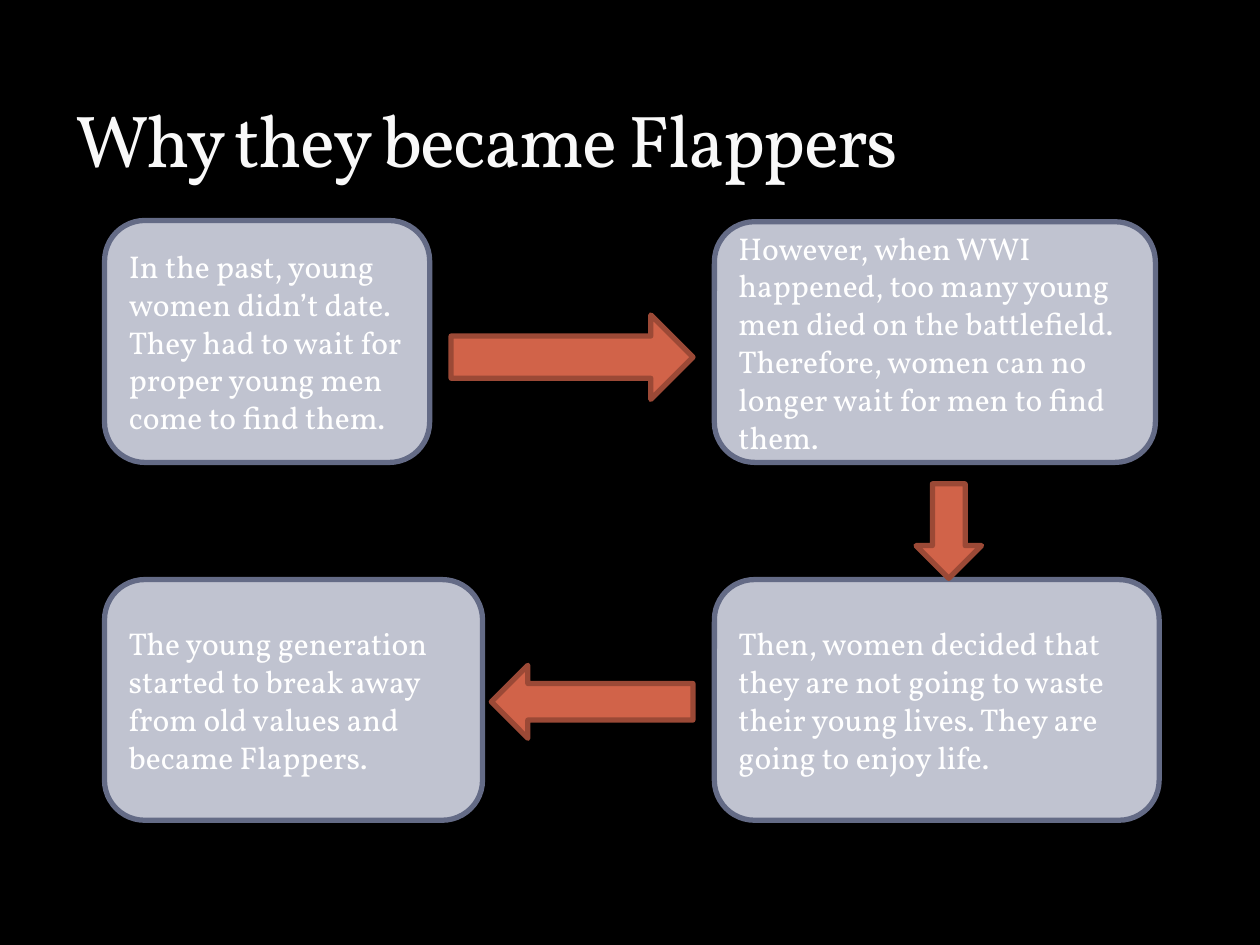
from dataclasses import dataclass

from lxml.etree import SubElement
from pptx import Presentation
from pptx.dml.color import RGBColor
from pptx.enum.shapes import MSO_SHAPE as Preset
from pptx.enum.text import MSO_ANCHOR as Anchor, MSO_AUTO_SIZE as AutoSize, PP_ALIGN as Align
from pptx.oxml.ns import qn
from pptx.util import Inches, Pt


@dataclass(frozen=True)
class Theme:
    font: str = "Vollkorn"
    background: str = "000000"
    title: str = "F9F9F9"
    title_outline: str = "585E76"
    body: str = "FFFFFF"
    box_fill: str = "C0C3D0"
    box_line: str = "646B86"
    arrow_fill: str = "D16349"
    arrow_line: str = "9B4936"
    title_size: float = 42
    body_size: float = 18
    line_width: float = 3


@dataclass(frozen=True)
class Step:
    left: float
    top: float
    width: float
    height: float
    text: str


@dataclass(frozen=True)
class Arrow:
    preset: Preset
    left: float
    top: float
    width: float
    height: float


THEME = Theme()
LEFT_COLUMN, RIGHT_COLUMN = 0.83, 5.67
LOWER_ROW, BOX_HEIGHT = 4.6, 1.91

STEPS = [
    Step(LEFT_COLUMN, 1.75, 2.58, 1.92,
         "In the past, young women didn’t date. They had to wait for proper "
         "young men come to find them."),
    Step(RIGHT_COLUMN, 1.76, 3.5, BOX_HEIGHT,
         "However, when WWI happened, too many young men died on the battlefield. "
         "Therefore, women can no longer wait for men to find them."),
    Step(RIGHT_COLUMN, LOWER_ROW, 3.53, BOX_HEIGHT,
         "Then, women decided that they are not going to waste their young lives. "
         "They are going to enjoy life."),
    Step(LEFT_COLUMN, LOWER_ROW, 3, BOX_HEIGHT,
         "The young generation started to break away from old values and "
         "became Flappers."),
]

ARROWS = [
    Arrow(Preset.RIGHT_ARROW, 3.58, 2.5, 1.92, 0.67),
    Arrow(Preset.DOWN_ARROW, 7.27, 3.84, 0.52, 0.75),
    Arrow(Preset.LEFT_ARROW, 3.9, 5.28, 1.6, 0.58),
]


def apply(target, values: dict) -> None:
    for name, value in values.items():
        setattr(target, name, value)


def write(shape, text: str, size: float, color: str, anchor: Anchor):
    frame = shape.text_frame
    apply(frame, {"word_wrap": True, "auto_size": AutoSize.NONE, "vertical_anchor": anchor})
    para = frame.paragraphs[0]
    para.alignment = Align.LEFT
    span = para.add_run()
    span.text = text
    apply(span.font, {"name": THEME.font, "size": Pt(size)})
    span.font.color.rgb = RGBColor.from_string(color)
    return span


def add_title(page, text: str) -> None:
    title = page.shapes.title
    apply(title, {"left": Inches(0.5), "top": Inches(0.17),
                  "width": Inches(9), "height": Inches(1.33)})
    span = write(title, text, THEME.title_size, THEME.title, Anchor.BOTTOM)
    properties = span.font._element
    properties.set("spc", "-100")
    outline = SubElement(properties, qn("a:ln"), w=str(Pt(0.25)))
    properties.insert(0, outline)
    fill = SubElement(outline, qn("a:solidFill"))
    color = SubElement(fill, qn("a:srgbClr"), val=THEME.title_outline)
    SubElement(color, qn("a:alpha"), val="25000")


def add_figure(page, preset: Preset, item: Step | Arrow, fill: str, line: str):
    shape = page.shapes.add_shape(preset, Inches(item.left), Inches(item.top),
                                  Inches(item.width), Inches(item.height))
    shape.shadow.inherit = False
    shape.fill.solid()
    shape.fill.fore_color.rgb = RGBColor.from_string(fill)
    shape.line.color.rgb = RGBColor.from_string(line)
    shape.line.width = Pt(THEME.line_width)
    return shape


def add_step(page, step: Step) -> None:
    box = add_figure(page, Preset.ROUNDED_RECTANGLE, step, THEME.box_fill, THEME.box_line)
    write(box, step.text, THEME.body_size, THEME.body, Anchor.MIDDLE)


def add_arrow(page, arrow: Arrow) -> None:
    add_figure(page, arrow.preset, arrow, THEME.arrow_fill, THEME.arrow_line)


def main() -> None:
    deck = Presentation()
    apply(deck, {"slide_width": Inches(10), "slide_height": Inches(7.5)})
    page = deck.slides.add_slide(deck.slide_layouts[5])
    page.background.fill.solid()
    page.background.fill.fore_color.rgb = RGBColor.from_string(THEME.background)
    add_title(page, "Why they became Flappers")
    for step in STEPS:
        add_step(page, step)
    for arrow in ARROWS:
        add_arrow(page, arrow)
    deck.save("out.pptx")


if __name__ == "__main__":
    main()
